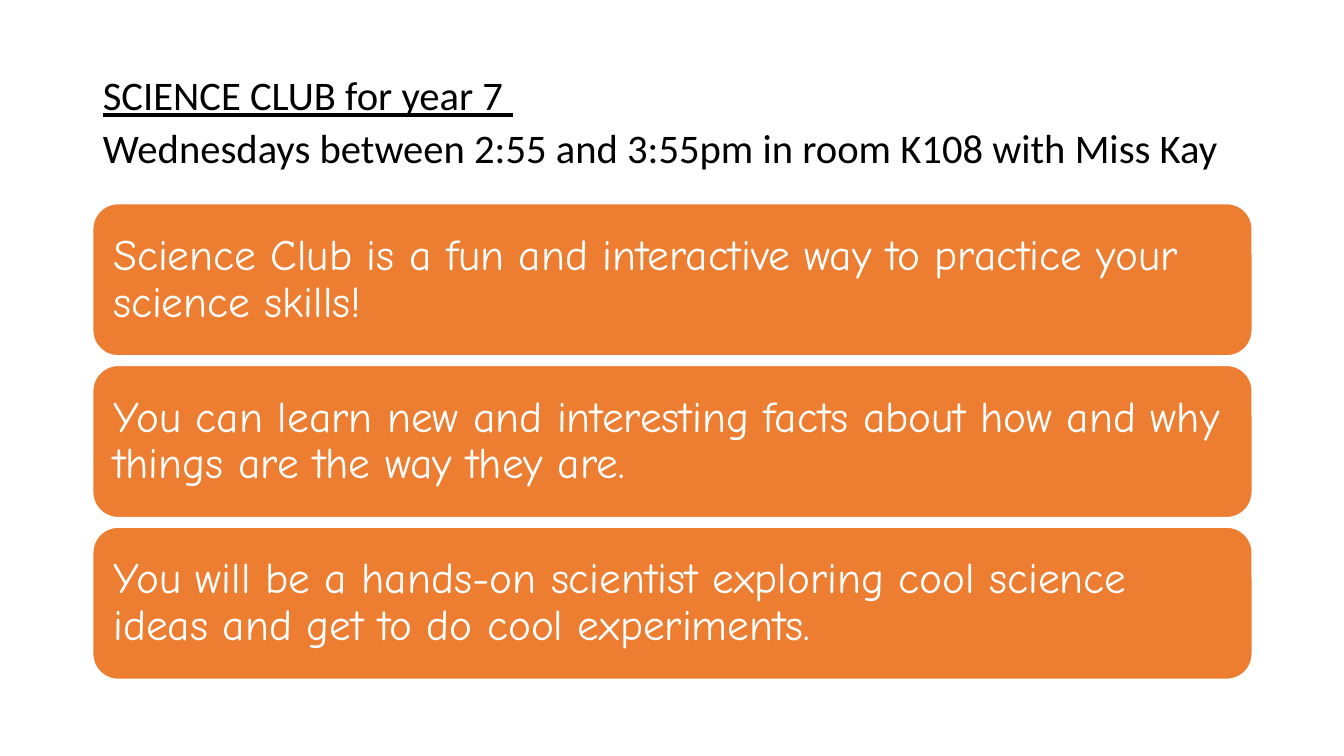
from pptx import Presentation
from pptx.dml.color import RGBColor
from pptx.enum.shapes import MSO_SHAPE
from pptx.enum.text import MSO_ANCHOR, MSO_AUTO_SIZE, PP_ALIGN
from pptx.util import Inches, Pt

COLORS = {"text": "000000", "panel": "ED7D31", "white": "FFFFFF"}
LEFT, WIDTH = 0.92, 11.5
PANEL_TOP, PANEL_HEIGHT, PANEL_STEP = 2.02, 1.51, 1.605

REASONS = [
    "Science Club is a fun and interactive way to practice your science skills!",
    "You can learn new and interesting facts about how and why things are the way they are.",
    "You will be a hands-on scientist exploring cool science ideas and get to do cool experiments.",
]


def color(name):
    return RGBColor.from_string(COLORS[name])


def write(para, text, *, font, size, fill, underline=False, space_after=0):
    para.alignment = PP_ALIGN.LEFT
    para.line_spacing = 0.9
    para.space_before = Pt(0)
    para.space_after = Pt(space_after)
    span = para.add_run()
    span.text = text
    span.font.name = font
    span.font.size = Pt(size)
    span.font.underline = underline
    span.font.color.rgb = color(fill)


def prepare_frame(frame, horizontal, vertical):
    """Wrap and middle-anchor the text, with insets in inches."""
    frame.word_wrap = True
    frame.auto_size = MSO_AUTO_SIZE.NONE
    frame.vertical_anchor = MSO_ANCHOR.MIDDLE
    frame.margin_left = frame.margin_right = Inches(horizontal)
    frame.margin_top = frame.margin_bottom = Inches(vertical)


def add_heading(page):
    title = page.shapes.title
    title.left, title.top = Inches(LEFT), Inches(0.61)
    title.width, title.height = Inches(WIDTH), Inches(1.24)
    frame = title.text_frame
    prepare_frame(frame, 0.1, 0.05)
    style = {"font": "Calibri", "size": 29, "fill": "text", "space_after": 6}
    write(frame.paragraphs[0], "SCIENCE CLUB for year 7 ", underline=True, **style)
    write(frame.add_paragraph(),
          "Wednesdays between 2:55 and 3:55pm in room K108 with Miss Kay", **style)


def add_panel(page, top, text):
    panel = page.shapes.add_shape(
        MSO_SHAPE.ROUNDED_RECTANGLE,
        Inches(LEFT), Inches(top), Inches(WIDTH), Inches(PANEL_HEIGHT))
    panel.shadow.inherit = False
    panel.fill.solid()
    panel.fill.fore_color.rgb = color("panel")
    panel.line.color.rgb = color("white")
    panel.line.width = Pt(1)
    # The rounded corners add about 0.07 inches to each inset.
    prepare_frame(panel.text_frame, 0.13, 0.13)
    write(panel.text_frame.paragraphs[0], text, font="Comic Neue", size=31, fill="white")


def main():
    deck = Presentation()
    deck.slide_width, deck.slide_height = Inches(13.33), Inches(7.5)
    page = deck.slides.add_slide(deck.slide_layouts.get_by_name("Title Only"))
    add_heading(page)
    for index, reason in enumerate(REASONS):
        add_panel(page, PANEL_TOP + index * PANEL_STEP, reason)
    deck.save("out.pptx")


if __name__ == "__main__":
    main()
